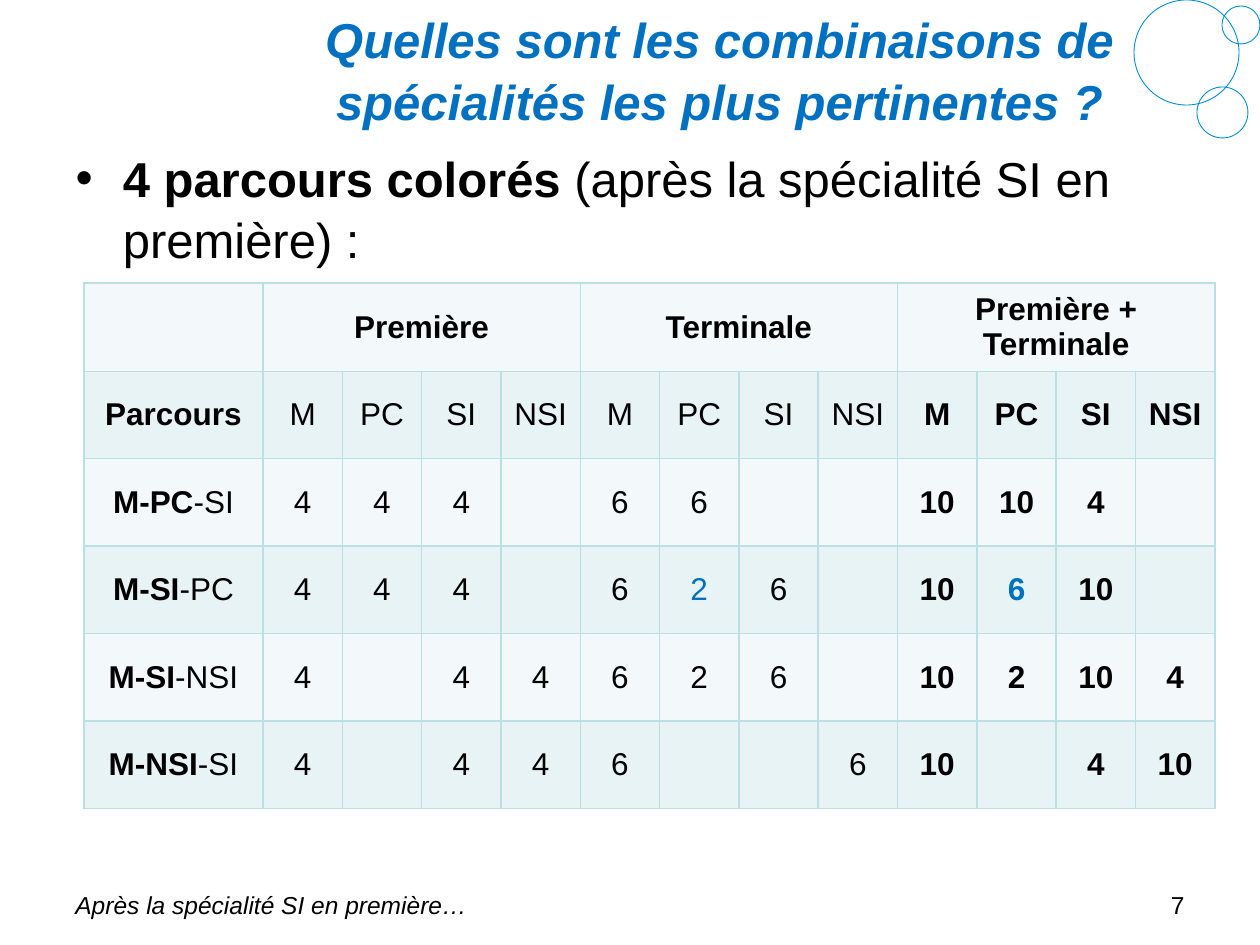
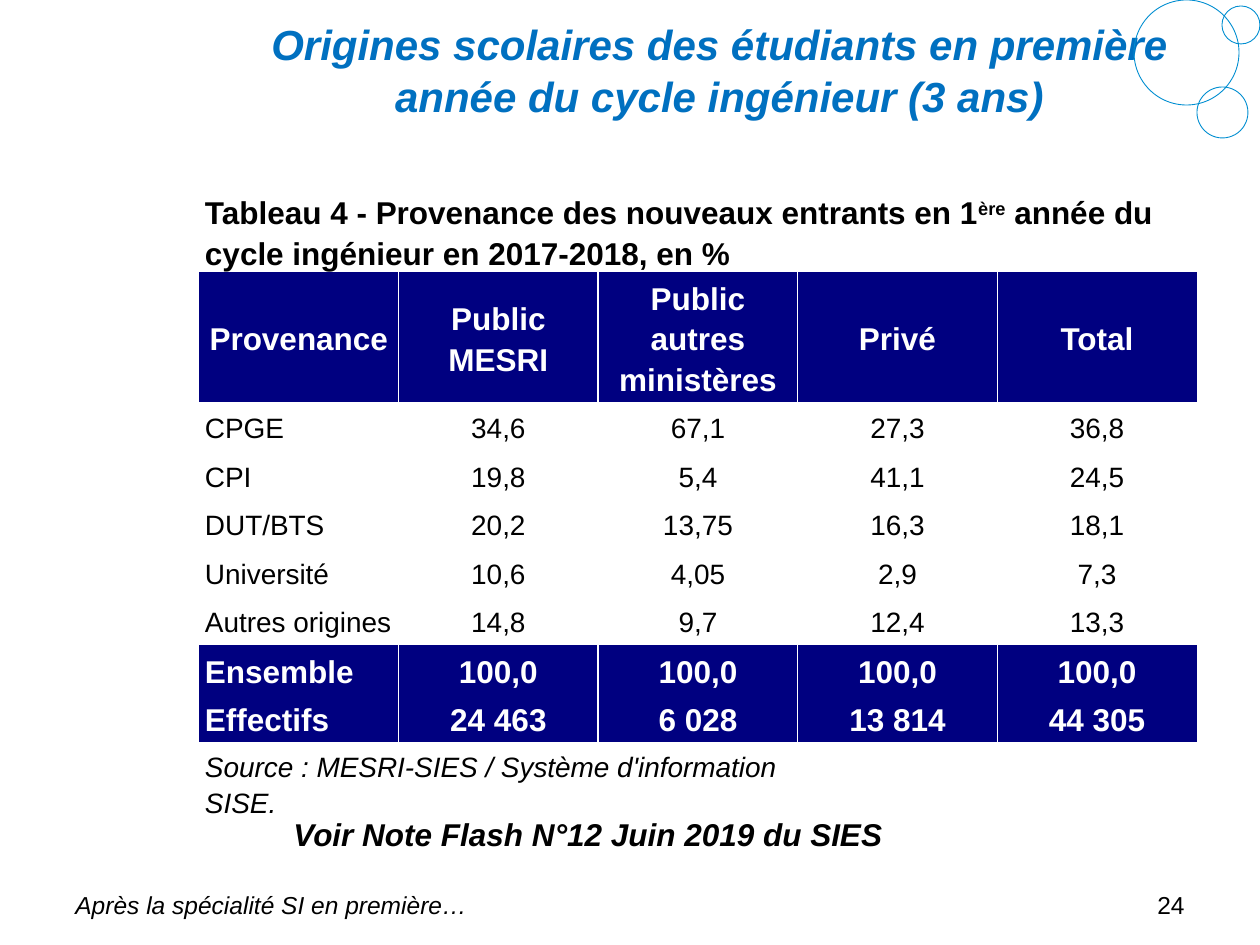
from dataclasses import dataclass

from lxml import etree
from pptx import Presentation
from pptx.dml.color import RGBColor
from pptx.enum import shapes, text
from pptx.oxml.ns import qn
from pptx.util import Emu, Pt

# Content
FOOTER = "Après la spécialité SI en première…"

COMBINATIONS = {
    "title": "Quelles sont les combinaisons de spécialités les plus pertinentes ?",
    "number": "7",
    "intro": [("4 parcours colorés ", {"bold": True}),
              ("(après la spécialité SI en première) :", {})],
    "periods": ["Première", "Terminale", "Première + Terminale"],
    "subjects": ["M", "PC", "SI", "NSI"],
    # main subjects, third subject, then hours for each period and subject
    "paths": [
        ("M-PC", "-SI", ["4", "4", "4", "", "6", "6", "", "", "10", "10", "4", ""]),
        ("M-SI", "-PC", ["4", "4", "4", "", "6", "2", "6", "", "10", "6", "10", ""]),
        ("M-SI", "-NSI", ["4", "", "4", "4", "6", "2", "6", "", "10", "2", "10", "4"]),
        ("M-NSI", "-SI", ["4", "", "4", "4", "6", "", "", "6", "10", "", "4", "10"]),
    ],
    "highlights": {(3, 6), (3, 10)},
}

ORIGINS = {
    "title": "Origines scolaires des étudiants en première année du cycle ingénieur (3 ans)",
    "number": "24",
    "caption": [("Tableau 4 - Provenance des nouveaux entrants en 1", {}),
                ("ère", {"raised": 30}),
                (" année du cycle ingénieur en 2017-2018, en %", {})],
    "header": ["Provenance", "Public MESRI", "Public autres ministères", "Privé", "Total"],
    "shares": [
        ["CPGE", "34,6", "67,1", "27,3", "36,8"],
        ["CPI", "19,8", "5,4", "41,1", "24,5"],
        ["DUT/BTS", "20,2", "13,75", "16,3", "18,1"],
        ["Université", "10,6", "4,05", "2,9", "7,3"],
        ["Autres origines", "14,8", "9,7", "12,4", "13,3"],
    ],
    "totals": [
        ["Ensemble", "100,0", "100,0", "100,0", "100,0"],
        ["Effectifs", "24 463", "6 028", "13 814", "44 305"],
    ],
    "source": "Source : MESRI-SIES / Système d'information SISE.",
    "reference": "Voir Note Flash N°12 Juin 2019 du SIES",
}


# Theme and geometry
@dataclass(frozen=True)
class Theme:
    font: str = "Arial"
    ink: str = "000000"
    white: str = "FFFFFF"
    blue: str = "0070C0"
    bubble: str = "008ED1"
    navy: str = "000080"
    grid: str = "BBE0E3"
    bands: tuple = ("F3F9FA", "E7F3F4")
    large: int = 28
    medium: int = 24
    normal: int = 18
    small: int = 16
    footer: int = 14


THEME = Theme()
NO_TABLE_STYLE = "{2D5ABB26-0587-4C30-8999-92F81FD0307C}"
LEFT, CENTER, RIGHT = text.PP_ALIGN.LEFT, text.PP_ALIGN.CENTER, text.PP_ALIGN.RIGHT
TOP, MIDDLE, BOTTOM = text.MSO_ANCHOR.TOP, text.MSO_ANCHOR.MIDDLE, text.MSO_ANCHOR.BOTTOM

TITLE_BOX = (242, 1, 955, 135)
INTRO_BOX = (63, 139, 1134, 136)
FOOTER_BOX = (63, 861, 924, 65)
NUMBER_BOX = (1008, 861, 189, 65)
REFERENCE_BOX = (105, 809, 966, 50)
BUBBLES = [(1134, 0, 105), (1222, 6, 38), (1197, 87, 51)]


def px(length):
    return Emu(round(length * 914400 / 126))


# Text
def write(frame, runs, size=THEME.normal, color=THEME.ink, bold=False, italic=False,
          align=LEFT, anchor=TOP, spacing=None):
    """Fill a text frame's single paragraph; runs is a string or (text, overrides) pairs."""
    frame.word_wrap = True
    frame.vertical_anchor = anchor
    paragraph = frame.paragraphs[0]
    paragraph.alignment = align
    paragraph.space_before = Pt(0)
    if spacing:
        paragraph.line_spacing = spacing
    for words, changes in [(runs, {})] if isinstance(runs, str) else runs:
        run = paragraph.add_run()
        run.text = words
        run.font.name = THEME.font
        run.font.size = Pt(size)
        run.font.bold = changes.get("bold", bold)
        run.font.italic = italic
        run.font.color.rgb = RGBColor.from_string(color)
        if "raised" in changes:
            run._r.get_or_add_rPr().set("baseline", str(changes["raised"] * 1000))


def add_label(slide, box, words, **look):
    write(slide.shapes.add_textbox(*map(px, box)).text_frame, words, **look)


def fill_placeholder(placeholder, box, words, **look):
    placeholder.left, placeholder.top, placeholder.width, placeholder.height = map(px, box)
    placeholder.text_frame.auto_size = text.MSO_AUTO_SIZE.NONE
    write(placeholder.text_frame, words, spacing=1.05, **look)


# Tables
def add_plain_table(slide, left, top, widths, heights):
    frame = slide.shapes.add_table(len(heights), len(widths), px(left), px(top),
                                   px(sum(widths)), px(sum(heights)))
    table = frame.table
    table.first_row = table.horz_banding = False
    table._tbl.tblPr.find(qn("a:tableStyleId")).text = NO_TABLE_STYLE
    for column, width in zip(table.columns, widths):
        column.width = px(width)
    for row, height in zip(table.rows, heights):
        row.height = px(height)
    return table


def paint(cell, fill=None, border=None, sides=""):
    """Set the cell's fill and the borders named in sides, in L, R, T, B order."""
    if fill:
        cell.fill.solid()
        cell.fill.fore_color.rgb = RGBColor.from_string(fill)
    else:
        cell.fill.background()
    properties = cell._tc.get_or_add_tcPr()
    for place, side in enumerate(sides):
        line = etree.Element(qn(f"a:ln{side}"), w=str(Pt(1)))
        solid = etree.SubElement(line, qn("a:solidFill"))
        etree.SubElement(solid, qn("a:srgbClr"), val=border)
        properties.insert(place, line)


def write_cell(cell, words, **look):
    anchor = look.pop("anchor", MIDDLE)
    cell.vertical_anchor = anchor
    if words:
        write(cell.text_frame, words, anchor=anchor, **look)
        # Cells take their anchor and wrapping from the cell itself
        body = cell.text_frame._txBody.bodyPr
        for name in list(body.attrib):
            del body.attrib[name]


# Shared slide frame
def add_slide(deck, layout, content, title_size):
    slide = deck.slides.add_slide(deck.slide_layouts[layout])
    for left, top, diameter in BUBBLES:
        bubble = slide.shapes.add_shape(shapes.MSO_SHAPE.OVAL,
                                        *map(px, (left, top, diameter, diameter)))
        bubble.shadow.inherit = False
        bubble.fill.background()
        bubble.line.color.rgb = RGBColor.from_string(THEME.bubble)
        bubble.line.width = Pt(0.5)
    fill_placeholder(slide.shapes.title, TITLE_BOX, content["title"], size=title_size,
                     color=THEME.blue, bold=True, italic=True, align=CENTER, anchor=MIDDLE)
    add_label(slide, FOOTER_BOX, FOOTER, size=THEME.footer, italic=True, anchor=BOTTOM)
    add_label(slide, NUMBER_BOX, content["number"], size=THEME.footer,
              align=RIGHT, anchor=BOTTOM)
    return slide


def build_combinations(deck):
    content = COMBINATIONS
    slide = add_slide(deck, 1, content, THEME.large)
    fill_placeholder(slide.placeholders[1], INTRO_BOX, content["intro"], size=THEME.large)

    subjects, periods = content["subjects"], content["periods"]
    hours = len(subjects) * len(periods)
    first_total = hours - len(subjects) + 1
    period_row = [""] + [name for period in periods
                         for name in [period] + [""] * (len(subjects) - 1)]
    rows = [period_row, ["Parcours"] + subjects * len(periods)]
    rows += [[[(main, {"bold": True}), (third, {})]] + values
             for main, third, values in content["paths"]]

    path_width, table_width, table_height = 179, 1131, 525
    widths = [path_width] + [(table_width - path_width) / hours] * hours
    table = add_plain_table(slide, 84, 283, widths, [table_height / len(rows)] * len(rows))
    for r, row in enumerate(rows):
        for c, words in enumerate(row):
            cell = table.cell(r, c)
            heading = r == 0 or (r == 1 and c == 0)
            write_cell(cell, words, align=CENTER, bold=heading or c >= first_total,
                       color=THEME.blue if (r, c) in content["highlights"] else THEME.ink)
            paint(cell, THEME.bands[r % 2], THEME.grid, "LRTB")
    for start in range(1, hours, len(subjects)):
        table.cell(0, start).merge(table.cell(0, start + len(subjects) - 1))


def build_origins(deck):
    content = ORIGINS
    slide = add_slide(deck, 5, content, THEME.medium)
    columns = len(content["header"])
    body = content["shares"] + content["totals"]
    blank = [""] * (columns - 1)
    rows = [[content["caption"]] + blank, content["header"], *body,
            [content["source"]] + blank]
    last = len(rows) - 1
    strong_rows = {1, *range(last - len(content["totals"]), last)}

    table_width, body_height = 998, 340
    heights = [86, 127] + [body_height / len(body)] * len(body) + [76]
    table = add_plain_table(slide, 199, 185, [table_width / columns] * columns, heights)
    for r, row in enumerate(rows):
        strong = r in strong_rows
        for c, words in enumerate(row):
            cell = table.cell(r, c)
            cell.margin_left = cell.margin_right = px(6)
            cell.margin_top = cell.margin_bottom = 0
            write_cell(cell, words, spacing=1.15, bold=strong or r == 0, italic=r == last,
                       size=THEME.normal if strong or r == 0 else THEME.small,
                       color=THEME.white if strong else THEME.ink,
                       align=CENTER if c or r == 1 else LEFT,
                       anchor=BOTTOM if r in (0, last) else MIDDLE)
            inner = ("L" if c else "") + ("R" if c < columns - 1 else "")
            paint(cell, THEME.navy if strong else None, THEME.white, inner if strong else "")
    table.cell(0, 0).merge(table.cell(0, columns - 1))
    table.cell(last, 0).merge(table.cell(last, 2))
    add_label(slide, REFERENCE_BOX, content["reference"], bold=True, italic=True, align=CENTER)


def main():
    deck = Presentation()
    deck.slide_width, deck.slide_height = px(1260), px(945)
    build_combinations(deck)
    build_origins(deck)
    deck.save("out.pptx")


if __name__ == "__main__":
    main()
